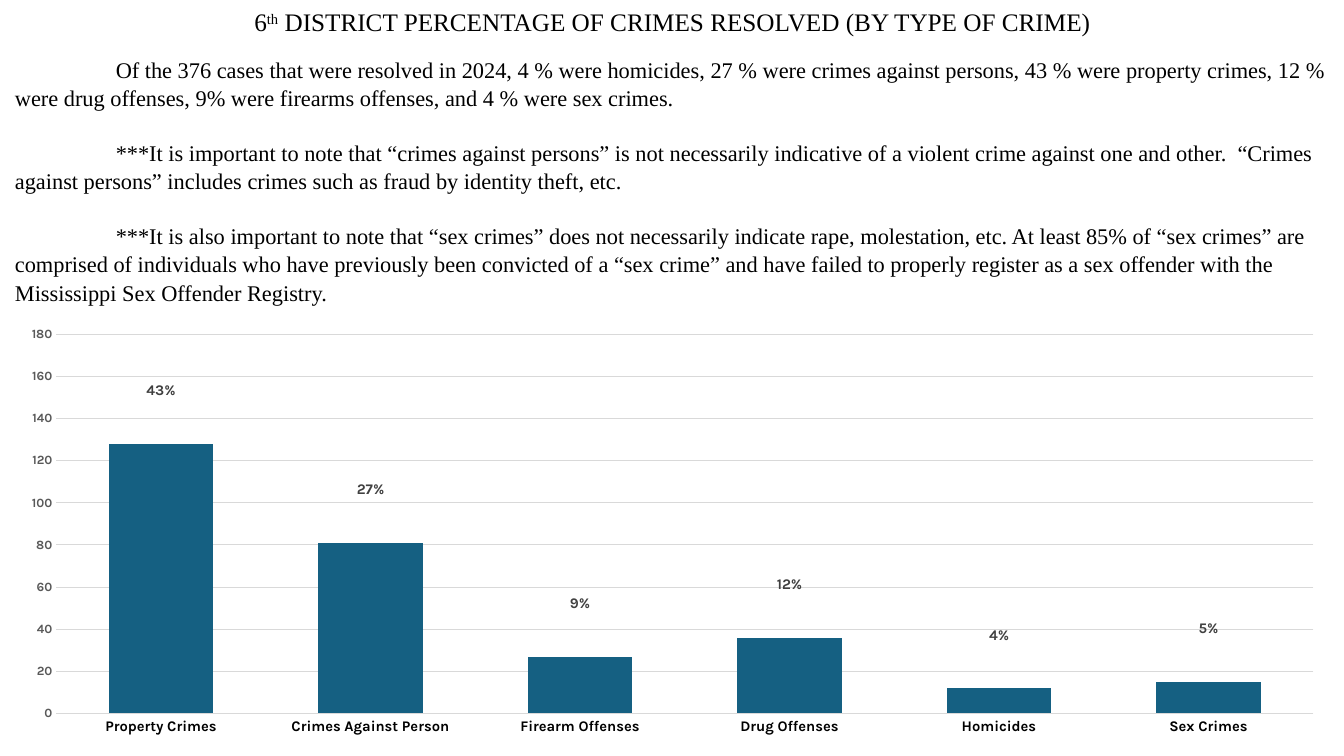
from dataclasses import dataclass

from pptx import Presentation
from pptx.chart.data import CategoryChartData
from pptx.dml.color import RGBColor
from pptx.enum.chart import XL_CHART_TYPE, XL_TICK_MARK
from pptx.enum.text import MSO_ANCHOR, PP_ALIGN
from pptx.util import Emu, Pt

COLUMN_STACKED = XL_CHART_TYPE.COLUMN_STACKED
NO_TICK = XL_TICK_MARK.NONE
TOP = MSO_ANCHOR.TOP
CENTER, LEFT = PP_ALIGN.CENTER, PP_ALIGN.LEFT
TITLE_ONLY = 5
EMU_PER_PX = 9144  # 100 px to the inch


@dataclass(frozen=True)
class Theme:
    serif: str = "Times New Roman"
    sans: str = "Karla"
    ink: RGBColor = RGBColor(0x00, 0x00, 0x00)
    bar: RGBColor = RGBColor(0x15, 0x60, 0x82)
    grid: RGBColor = RGBColor(0xD9, 0xD9, 0xD9)
    scale: RGBColor = RGBColor(0x59, 0x59, 0x59)
    label: RGBColor = RGBColor(0x40, 0x40, 0x40)
    title_size: float = 18
    body_size: float = 16
    chart_size: float = 10
    label_size: float = 10.5
    scale_size: float = 9
    rule_width: float = 0.75
    line_spacing: float = 1.05
    paragraph_gap: float = 19.3


@dataclass(frozen=True)
class Box:
    x: int
    y: int
    w: int
    h: int

    def emu(self) -> tuple[Emu, ...]:
        return tuple(Emu(v * EMU_PER_PX) for v in (self.x, self.y, self.w, self.h))


@dataclass(frozen=True)
class Crime:
    name: str
    cases: int
    share: float


THEME = Theme()
SLIDE = Box(0, 0, 1333, 750)
TITLE_BOX = Box(5, 0, 1324, 45)
BODY_BOX = Box(5, 49, 1324, 252)
CHART_BOX = Box(5, 316, 1324, 422)
FIRST_LINE_INDENT = 100
LABEL_LIFT = 25  # clear space between a bar and its label

TITLE = (("6", 0), ("th", 30000),
         (" DISTRICT PERCENTAGE OF CRIMES RESOLVED (BY TYPE OF CRIME)", 0))
BODY = (
    "Of the 376 cases that were resolved in 2024, 4 % were homicides, 27 % were crimes "
    "against persons, 43 % were property crimes, 12 % were drug offenses, 9% were "
    "firearms offenses, and 4 % were sex crimes.",
    "***It is important to note that “crimes against persons” is not necessarily "
    "indicative of a violent crime against one and other.  “Crimes against persons” "
    "includes crimes such as fraud by identity theft, etc.",
    "***It is also important to note that “sex crimes” does not necessarily indicate "
    "rape, molestation, etc. At least 85% of “sex crimes” are comprised of individuals "
    "who have previously been convicted of a “sex crime” and have failed to properly "
    "register as a sex offender with the Mississippi Sex Offender Registry.",
)
CRIMES = (
    Crime("Property Crimes", 128, 0.43),
    Crime("Crimes Against Person", 81, 0.27),
    Crime("Firearm Offenses", 27, 0.09),
    Crime("Drug Offenses", 36, 0.12),
    Crime("Homicides", 12, 0.04),
    Crime("Sex Crimes", 15, 0.05),
)


def style_font(font, name: str, size: float, color: RGBColor, bold: bool = False) -> None:
    font.name, font.size, font.bold = name, Pt(size), bold
    font.color.rgb = color


def add_run(p, text: str, size: float, baseline: int = 0) -> None:
    r = p.add_run()
    r.text = text
    style_font(r.font, THEME.serif, size, THEME.ink)
    if baseline:
        r.font._element.set("baseline", str(baseline))


def set_frame(tf) -> None:
    tf.word_wrap = True
    tf.vertical_anchor = TOP


def fill_title(sp) -> None:
    sp.left, sp.top, sp.width, sp.height = TITLE_BOX.emu()
    tf = sp.text_frame
    set_frame(tf)
    p = tf.paragraphs[0]
    p.alignment = CENTER
    p.line_spacing = THEME.line_spacing
    for text, baseline in TITLE:
        add_run(p, text, THEME.title_size, baseline)


def add_body(s) -> None:
    tf = s.shapes.add_textbox(*BODY_BOX.emu()).text_frame
    set_frame(tf)
    for i, text in enumerate(BODY):
        p = tf.add_paragraph() if i else tf.paragraphs[0]
        p.alignment = LEFT
        p.line_spacing = THEME.line_spacing
        p.space_before = Pt(THEME.paragraph_gap if i else 0)
        p._p.get_or_add_pPr().set("indent", str(FIRST_LINE_INDENT * EMU_PER_PX))
        add_run(p, text, THEME.body_size)


def style_axes(chart) -> None:
    cat, val = chart.category_axis, chart.value_axis
    for axis in (cat, val):
        axis.major_tick_mark = axis.minor_tick_mark = NO_TICK
    style_font(cat.tick_labels.font, THEME.sans, THEME.label_size, THEME.ink, True)
    style_font(val.tick_labels.font, THEME.sans, THEME.scale_size, THEME.scale, True)
    val.minimum_scale, val.maximum_scale, val.major_unit = 0, 180, 20
    val.format.line.fill.background()
    val.has_major_gridlines = True
    for line in (cat.format.line, val.major_gridlines.format.line):
        line.color.rgb = THEME.grid
        line.width = Pt(THEME.rule_width)


def add_crime_chart(s) -> None:
    data = CategoryChartData()
    data.categories = [c.name for c in CRIMES]
    data.add_series("Series 1", [c.cases for c in CRIMES])
    data.add_series("Series 2", [LABEL_LIFT] * len(CRIMES))
    data.add_series("Series 3", [c.share for c in CRIMES], "0%")
    chart = s.shapes.add_chart(COLUMN_STACKED, *CHART_BOX.emu(), data).chart
    chart.has_title = chart.has_legend = False
    style_font(chart.font, THEME.sans, THEME.chart_size, THEME.ink)
    style_axes(chart)

    plot = chart.plots[0]
    plot.gap_width, plot.overlap, plot.vary_by_categories = 100, 97, False
    cases, lift, share = plot.series
    cases.format.fill.solid()
    cases.format.fill.fore_color.rgb = THEME.bar
    for series in (lift, share):
        series.format.fill.background()

    # Percentages float above the bars
    labels = share.data_labels
    labels.show_value = True
    labels.number_format, labels.number_format_is_linked = "0%", False
    style_font(labels.font, THEME.sans, THEME.label_size, THEME.label, True)


def main() -> None:
    prs = Presentation()
    _, _, prs.slide_width, prs.slide_height = SLIDE.emu()
    s = prs.slides.add_slide(prs.slide_layouts[TITLE_ONLY])
    fill_title(s.shapes.title)
    add_body(s)
    add_crime_chart(s)
    prs.save("out.pptx")


if __name__ == "__main__":
    main()
